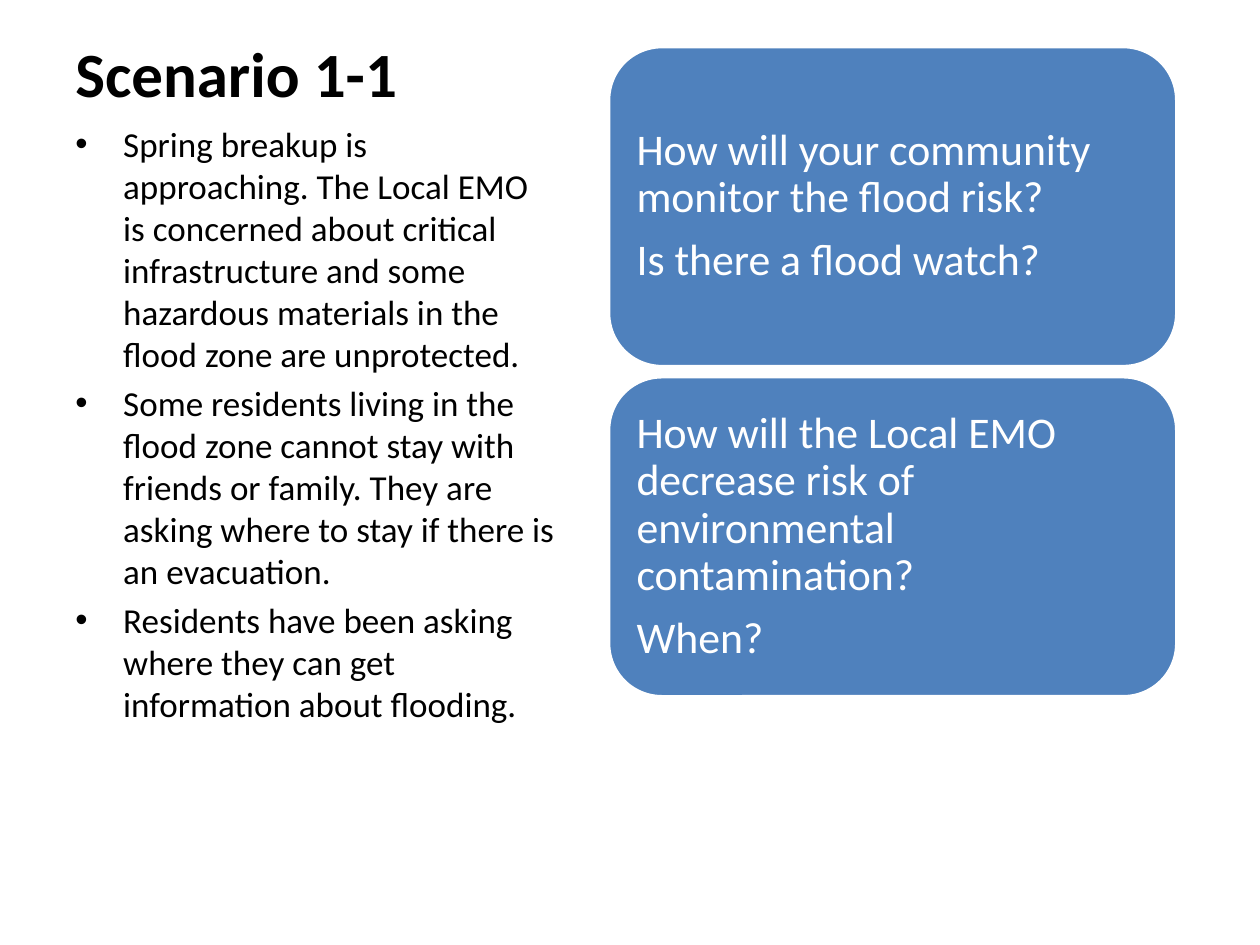
from dataclasses import dataclass

from lxml.etree import SubElement
from pptx import Presentation
from pptx.dml.color import RGBColor
from pptx.enum.shapes import MSO_SHAPE
from pptx.enum.text import MSO_ANCHOR, PP_ALIGN
from pptx.oxml.ns import qn
from pptx.slide import Slide
from pptx.text.text import TextFrame, _Paragraph
from pptx.util import Inches, Pt


@dataclass(frozen=True)
class Theme:
    font: str = "Calibri"
    ink: RGBColor = RGBColor(0x00, 0x00, 0x00)
    paper: RGBColor = RGBColor(0xFF, 0xFF, 0xFF)
    card: RGBColor = RGBColor(0x4F, 0x81, 0xBD)
    title_size: int = 36
    body_size: int = 20
    card_size: int = 25


@dataclass(frozen=True)
class Box:
    left: float
    top: float
    width: float
    height: float

    def lengths(self) -> list[Inches]:
        return [Inches(v) for v in (self.left, self.top, self.width, self.height)]


@dataclass(frozen=True)
class QuestionCard:
    box: Box
    questions: tuple[str, ...]


THEME = Theme()

TITLE = "Scenario 1-1"
SITUATION = (
    "Spring breakup is approaching. The Local EMO is concerned about critical "
    "infrastructure and some hazardous materials in the flood zone are unprotected.",
    "Some residents living in the flood zone cannot stay with friends or family. "
    "They are asking where to stay if there is an evacuation.",
    "Residents have been asking where they can get information about flooding.",
)
QUESTIONS = (
    ("How will your community monitor the flood risk?", "Is there a flood watch?"),
    ("How will the Local EMO decrease risk of environmental contamination?", "When?"),
)
CARD_TOP, CARD_HEIGHT, CARD_GAP = 0.37, 2.54, 0.08


def add_paragraph(frame: TextFrame, index: int) -> _Paragraph:
    return frame.add_paragraph() if index else frame.paragraphs[0]


def add_run(paragraph: _Paragraph, text: str, size: int, color: RGBColor,
            bold: bool = False) -> None:
    run = paragraph.add_run()
    run.text = text
    run.font.name = THEME.font
    run.font.size = Pt(size)
    run.font.bold = bold
    run.font.color.rgb = color


def add_bullet(paragraph: _Paragraph, indent: float) -> None:
    properties = paragraph._p.get_or_add_pPr()
    properties.set("marL", str(Inches(indent)))
    properties.set("indent", str(-Inches(indent)))
    SubElement(properties, qn("a:buFont"), typeface="Arial")
    SubElement(properties, qn("a:buChar"), char="•")


def add_text_frame(slide: Slide, box: Box, anchor: MSO_ANCHOR) -> TextFrame:
    frame = slide.shapes.add_textbox(*box.lengths()).text_frame
    frame.word_wrap = True
    frame.vertical_anchor = anchor
    return frame


def draw_title(slide: Slide, box: Box) -> None:
    frame = add_text_frame(slide, box, MSO_ANCHOR.BOTTOM)
    add_run(frame.paragraphs[0], TITLE, THEME.title_size, THEME.ink, bold=True)


def draw_situation(slide: Slide, box: Box) -> None:
    frame = add_text_frame(slide, box, MSO_ANCHOR.TOP)
    for index, point in enumerate(SITUATION):
        paragraph = add_paragraph(frame, index)
        add_bullet(paragraph, 0.38)
        if index:
            paragraph.space_before = Pt(4)
        add_run(paragraph, point, THEME.body_size, THEME.ink)


def draw_card(slide: Slide, card: QuestionCard) -> None:
    panel = slide.shapes.add_shape(MSO_SHAPE.ROUNDED_RECTANGLE, *card.box.lengths())
    panel.shadow.inherit = False
    panel.fill.solid()
    panel.fill.fore_color.rgb = THEME.card
    panel.line.color.rgb = THEME.paper
    panel.line.width = Pt(2)

    frame = panel.text_frame
    frame.word_wrap = True
    frame.vertical_anchor = MSO_ANCHOR.MIDDLE
    frame.margin_left = frame.margin_right = Inches(0.1)
    frame.margin_top = frame.margin_bottom = Inches(0.1)
    for index, question in enumerate(card.questions):
        paragraph = add_paragraph(frame, index)
        paragraph.alignment = PP_ALIGN.LEFT
        paragraph.line_spacing = 0.9
        paragraph.space_after = Pt(9)
        add_run(paragraph, question, THEME.card_size, THEME.paper)


def main() -> None:
    presentation = Presentation()
    presentation.slide_width = Inches(10)
    presentation.slide_height = Inches(7.5)
    slide = presentation.slides.add_slide(presentation.slide_layouts[6])

    # Left column: the scenario
    draw_title(slide, Box(0.5, 0.3, 3.29, 0.62))
    draw_situation(slide, Box(0.5, 0.92, 4, 4.1))

    # Right column: discussion questions
    for row, questions in enumerate(QUESTIONS):
        top = CARD_TOP + row * (CARD_HEIGHT + CARD_GAP)
        draw_card(slide, QuestionCard(Box(4.83, top, 4.51, CARD_HEIGHT), questions))

    presentation.save("out.pptx")


if __name__ == "__main__":
    main()
